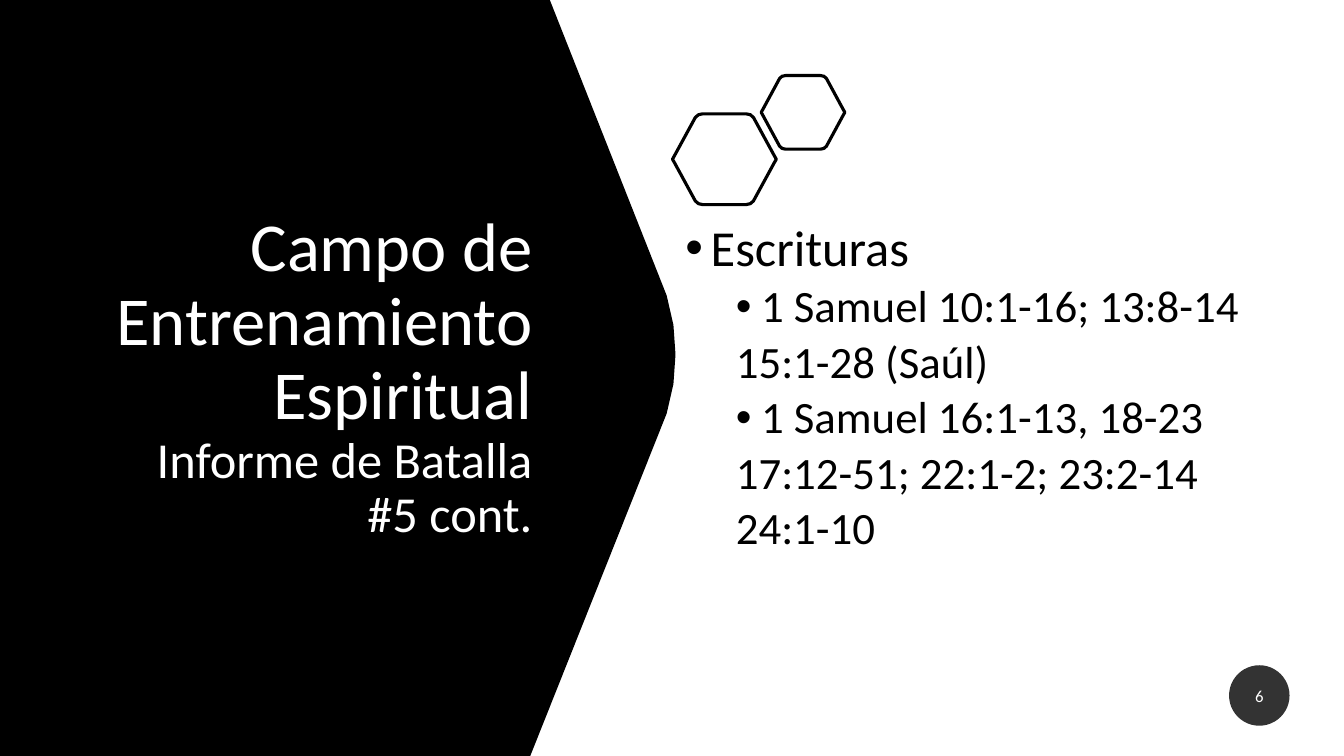
from pptx import Presentation
from pptx import util as u
from pptx.dml import color
from pptx.enum import shapes, text
from pptx.oxml import ns
from lxml import etree

WIDTH, HEIGHT = 13.33, 7.5
BLACK, WHITE = "000000", "FFFFFF"
SCRIPTURES = [
    ("Escrituras", 0, True),
    ("1 Samuel 10:1-16; 13:8-14", 1, True),
    ("15:1-28 (Saúl)", 1, False),
    ("1 Samuel 16:1-13, 18-23", 1, True),
    ("17:12-51; 22:1-2; 23:2-14", 1, False),
    ("24:1-10", 1, False),
]


def paint(target, value):
    target.rgb = color.RGBColor.from_string(value)


def fill(shape, value):
    shape.fill.solid()
    paint(shape.fill.fore_color, value)


def style(font, size, value):
    font.name = "Calibri"
    font.size = u.Pt(size)
    paint(font.color, value)


def outline(parent, box, points):
    left, top, width, height = box
    places = [(u.Inches(left + x * width), u.Inches(top + y * height)) for x, y in points]
    builder = parent.build_freeform(*places[0], scale=1.0)
    builder.add_line_segments(places[1:], close=True)
    shape = builder.convert_to_shape()
    shape.shadow.inherit = False
    return shape


def text_frame(page, box, anchor):
    frame = page.shapes.add_textbox(*map(u.Inches, box)).text_frame
    frame.word_wrap = True
    frame.vertical_anchor = anchor
    return frame


def arrow_panel(page, box):
    tip = [(0.987, 0.391), (0.997, 0.43), (1, 0.469), (0.997, 0.508), (0.987, 0.547)]
    panel = outline(page.shapes, box, [(0, 0), (0.814, 0), *tip, (0.785, 1), (0, 1)])
    fill(panel, BLACK)
    panel.line.fill.background()


def title(page, box):
    para = text_frame(page, box, text.MSO_ANCHOR.MIDDLE).paragraphs[0]
    para.alignment = text.PP_ALIGN.RIGHT
    para.line_spacing = 0.9
    heading = para.add_run()
    heading.text = "Campo de Entrenamiento Espiritual"
    style(heading.font, 49, WHITE)
    para.add_line_break()
    subtitle = para.add_run()
    subtitle.text = "Informe de Batalla #5 cont."
    style(subtitle.font, 36, WHITE)


def hexagons(page, boxes):
    side = [(0.02, 0.54), (0, 0.5), (0.02, 0.46)]
    corner = [(0.22, 0.04), (0.25, 0.01), (0.29, 0)]
    half = side + corner + [(1 - x, y) for x, y in reversed(corner)]
    points = half + [(1 - x, 1 - y) for x, y in half]
    group = page.shapes.add_group_shape()
    for box in boxes:
        hexagon = outline(group.shapes, box, points)
        hexagon.fill.background()
        paint(hexagon.line.color, BLACK)
        hexagon.line.width = u.Pt(2.25)


def scripture_list(page, box):
    frame = text_frame(page, box, text.MSO_ANCHOR.TOP)
    frame.margin_top = u.Inches(0.18)
    for index, (words, level, bulleted) in enumerate(SCRIPTURES):
        para = frame.add_paragraph() if index else frame.paragraphs[0]
        para.text = words
        para.level = level
        para.line_spacing = 0.9
        para.space_before = u.Pt(5 if level else 10)
        hang = 0.25 if bulleted else 0
        props = para._p.get_or_add_pPr()
        props.set("marL", str(u.Inches(0.5 * level + hang)))
        props.set("indent", str(u.Inches(-hang)))
        if bulleted:
            etree.SubElement(props, ns.qn("a:buFont"), typeface="Arial")
            etree.SubElement(props, ns.qn("a:buChar"), char="•")
        style(para.font, 32 if level else 36, BLACK)


def page_number(page, box):
    badge = page.shapes.add_shape(shapes.MSO_SHAPE.OVAL, *map(u.Inches, box))
    badge.shadow.inherit = False
    fill(badge, BLACK)
    shade = badge.fill._xPr.find(".//" + ns.qn("a:srgbClr"))
    etree.SubElement(shade, ns.qn("a:alpha"), val="80000")
    badge.line.fill.background()
    frame = badge.text_frame
    frame.vertical_anchor = text.MSO_ANCHOR.MIDDLE
    para = frame.paragraphs[0]
    para.text = "6"
    para.alignment = text.PP_ALIGN.CENTER
    para.space_after = u.Pt(6)
    style(para.font, 12, WHITE)


def main():
    deck = Presentation()
    deck.slide_width, deck.slide_height = u.Inches(WIDTH), u.Inches(HEIGHT)
    page = deck.slides.add_slide(deck.slide_layouts[6])
    page.background.fill.solid()
    paint(page.background.fill.fore_color, WHITE)
    arrow_panel(page, (0, 0, 6.7, HEIGHT))
    title(page, (0.84, 1.41, 4.54, 4.68))
    hexagons(page, [(6.67, 1.13, 1.03, 0.9), (7.55, 0.75, 0.83, 0.73)])
    scripture_list(page, (6.7, 2.03, 6.12, 4.57))
    page_number(page, (12.19, 6.6, 0.6, 0.6))
    deck.save("out.pptx")


if __name__ == "__main__":
    main()
